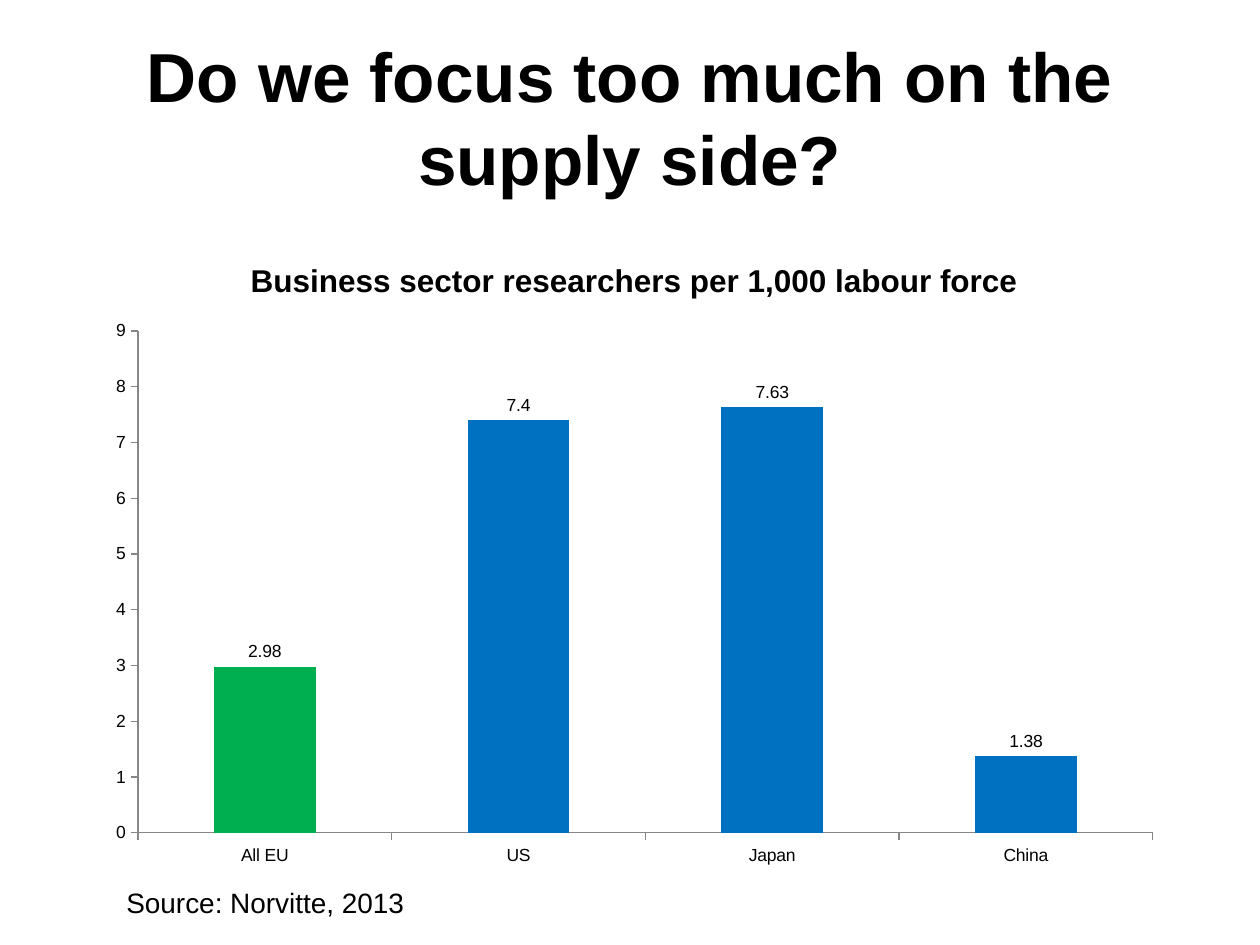
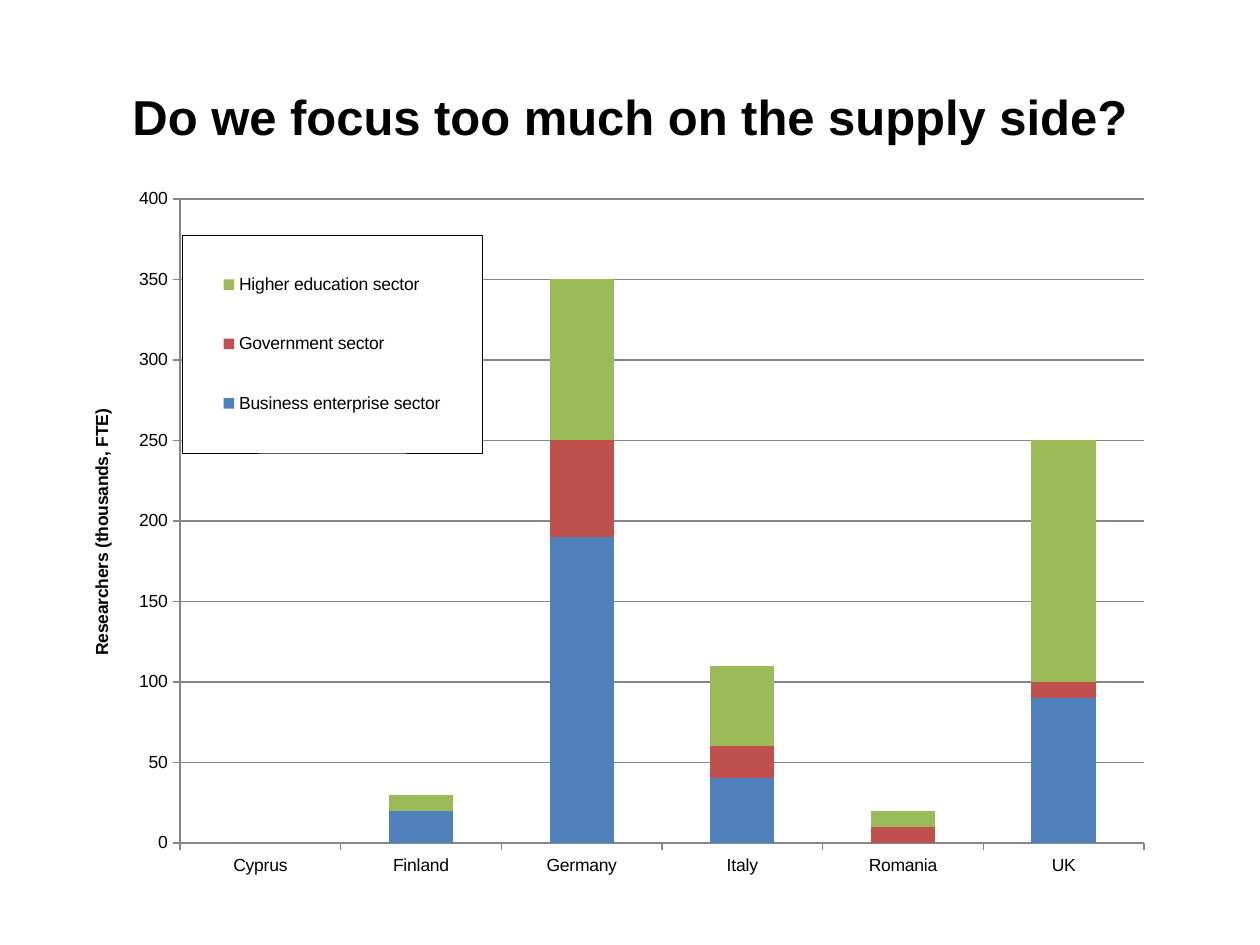
"""Build two slides comparing researcher numbers by country and by sector."""
from lxml import etree
from pptx import Presentation
from pptx.chart.data import CategoryChartData
from pptx.dml.color import RGBColor
from pptx.enum.chart import XL_CHART_TYPE as ChartType
from pptx.enum.chart import XL_LABEL_POSITION as LabelPosition
from pptx.enum.chart import XL_LEGEND_POSITION as LegendPosition
from pptx.enum.chart import XL_TICK_MARK as TickMark
from pptx.enum.text import MSO_ANCHOR as Anchor
from pptx.enum.text import MSO_AUTO_SIZE as AutoSize
from pptx.enum.text import PP_ALIGN as Align
from pptx.oxml import parse_xml
from pptx.oxml.ns import nsdecls, qn
from pptx.util import Pt

FONT = "Arial"
BLACK, WHITE, AXIS_GREY = "000000", "FFFFFF", "868686"
BLUE, GREEN = "0070C0", "00B050"
SLIDE_SIZE = (1260, 945)
TITLE_BOX = (63, 37, 1134, 158)
TITLE = "Do we focus too much on the supply side?"

DENSITY = {
    "type": ChartType.COLUMN_CLUSTERED,
    "frame": (95, 234, 1080, 644),
    "plot": (138, 331, 1015, 502),
    "categories": ["All EU", "US", "Japan", "China"],
    "series": [("Business sector researchers per 1,000 labour force",
                [2.98, 7.4, 7.63, 1.38], BLUE)],
    "scale": (9, 1),
    "overlap": 0,
    "gridlines": False,
}
SECTORS = {
    "type": ChartType.COLUMN_STACKED,
    "frame": (64, 175, 1101, 714),
    "plot": (180, 199, 964, 644),
    "categories": ["Cyprus", "Finland", "Germany", "Italy", "Romania", "UK"],
    "series": [
        ("Business enterprise sector", [0, 20, 190, 40, 0, 90], "4F81BD"),
        ("Government sector", [0, 0, 60, 20, 10, 10], "C0504D"),
        ("Higher education sector", [0, 10, 100, 50, 10, 150], "9BBB59"),
    ],
    "scale": (400, 50),
    "overlap": 100,
    "gridlines": True,
}
CHART_TITLE_AT = (245, 254)
AXIS_TITLE = "Researchers (thousands, FTE)"
AXIS_TITLE_AT = (87, 406)
LEGEND_BOX = (182, 235, 300, 218)
SOURCE = "Source: Norvitte, 2013"
SOURCE_BOX = (114, 879, 312, 47)


def px(length):
    return round(length * 914400 / 126)


def color(value):
    return RGBColor.from_string(value)


def style_font(font, size, bold=False):
    font.name, font.size, font.bold = FONT, Pt(size), bold
    font.color.rgb = color(BLACK)


def add_text(slide, box, text, size, bold=False, wrap=False):
    frame = slide.shapes.add_textbox(*map(px, box)).text_frame
    frame.word_wrap = wrap
    frame.auto_size = AutoSize.NONE if wrap else AutoSize.SHAPE_TO_FIT_TEXT
    paragraph = frame.paragraphs[0]
    paragraph.text = text
    style_font(paragraph.font, size, bold)
    return frame


def add_titled_slide(presentation, size):
    slide = presentation.slides.add_slide(presentation.slide_layouts[6])
    frame = add_text(slide, TITLE_BOX, TITLE, size, bold=True, wrap=True)
    frame.vertical_anchor = Anchor.MIDDLE
    frame.paragraphs[0].alignment = Align.CENTER
    return slide


def pin(element, index, frame, box, inner=False):
    """Place a chart part at a slide position, as fractions of the chart frame."""
    for old in element.findall(qn("c:layout")):
        element.remove(old)
    layout = parse_xml(f"<c:layout {nsdecls('c')}><c:manualLayout/></c:layout>")
    settings = [("layoutTarget", "inner")] if inner else []
    settings += [("xMode", "edge"), ("yMode", "edge")]
    fractions = [(box[0] - frame[0]) / frame[2], (box[1] - frame[1]) / frame[3]]
    fractions += [length / whole for length, whole in zip(box[2:], frame[2:])]
    settings += [(key, f"{value:.4f}") for key, value in zip("xywh", fractions)]
    for key, value in settings:
        etree.SubElement(layout[0], qn(f"c:{key}")).set("val", value)
    element.insert(index, layout)


def add_column_chart(slide, content):
    data = CategoryChartData()
    data.categories = content["categories"]
    for name, values, _ in content["series"]:
        data.add_series(name, values)
    frame = content["frame"]
    chart = slide.shapes.add_chart(content["type"], *map(px, frame), data).chart
    style_font(chart.font, 10)
    chart.has_title = chart.has_legend = False
    plot = chart.plots[0]
    plot.vary_by_categories = False
    plot.gap_width, plot.overlap = 150, content["overlap"]
    for series, (_, _, fill) in zip(plot.series, content["series"]):
        series.invert_if_negative = False
        series.format.fill.solid()
        series.format.fill.fore_color.rgb = color(fill)
    value_axis = chart.value_axis
    value_axis.minimum_scale = 0
    value_axis.maximum_scale, value_axis.major_unit = content["scale"]
    value_axis.has_major_gridlines = content["gridlines"]
    lined = [chart.category_axis, value_axis]
    for axis in lined:
        axis.major_tick_mark = TickMark.OUTSIDE
    if content["gridlines"]:
        lined.append(value_axis.major_gridlines)
    for part in lined:
        part.format.line.color.rgb = color(AXIS_GREY)
        part.format.line.width = Pt(0.75)
    pin(chart.element.xpath("//c:plotArea")[0], 0, frame, content["plot"], inner=True)
    return chart


def set_title(title, element, text, size, frame, position):
    title.text_frame.text = text
    style_font(title.text_frame.paragraphs[0].font, size, bold=True)
    pin(element, 1, frame, position)


def add_legend(chart, frame):
    chart.has_legend = True
    legend = chart.legend
    legend.position = LegendPosition.LEFT
    legend.include_in_layout = True
    style_font(legend.font, 10)
    element = chart.element.xpath("//c:legend")[0]
    pin(element, 1, frame, LEGEND_BOX)
    fill = '<a:solidFill><a:srgbClr val="{}"/></a:solidFill>'
    element.find(qn("c:overlay")).addnext(parse_xml(
        f"<c:spPr {nsdecls('c', 'a')}>{fill.format(WHITE)}"
        f'<a:ln w="3175">{fill.format(BLACK)}</a:ln></c:spPr>'))


def build_density_slide(presentation):
    slide = add_titled_slide(presentation, 39.6)
    chart = add_column_chart(slide, DENSITY)
    chart.has_title = True
    set_title(chart.chart_title, chart.element.xpath("c:chart/c:title")[0],
              DENSITY["series"][0][0], 18, DENSITY["frame"], CHART_TITLE_AT)
    plot = chart.plots[0]
    europe = plot.series[0].points[0].format.fill
    europe.solid()
    europe.fore_color.rgb = color(GREEN)
    plot.has_data_labels = True
    labels = plot.data_labels
    labels.show_value, labels.position = True, LabelPosition.OUTSIDE_END
    style_font(labels.font, 10)
    add_text(slide, SOURCE_BOX, SOURCE, 16)


def build_sectors_slide(presentation):
    slide = add_titled_slide(presentation, 28)
    chart = add_column_chart(slide, SECTORS)
    frame = SECTORS["frame"]
    chart.value_axis.has_title = True
    set_title(chart.value_axis.axis_title, chart.element.xpath("//c:valAx/c:title")[0],
              AXIS_TITLE, 10, frame, AXIS_TITLE_AT)
    body = chart.element.xpath("//c:valAx/c:title//a:bodyPr")[0]
    body.set("rot", "-5400000")
    body.set("vert", "horz")
    add_legend(chart, frame)


def main():
    presentation = Presentation()
    presentation.slide_width, presentation.slide_height = map(px, SLIDE_SIZE)
    build_density_slide(presentation)
    build_sectors_slide(presentation)
    presentation.save("out.pptx")


if __name__ == "__main__":
    main()
